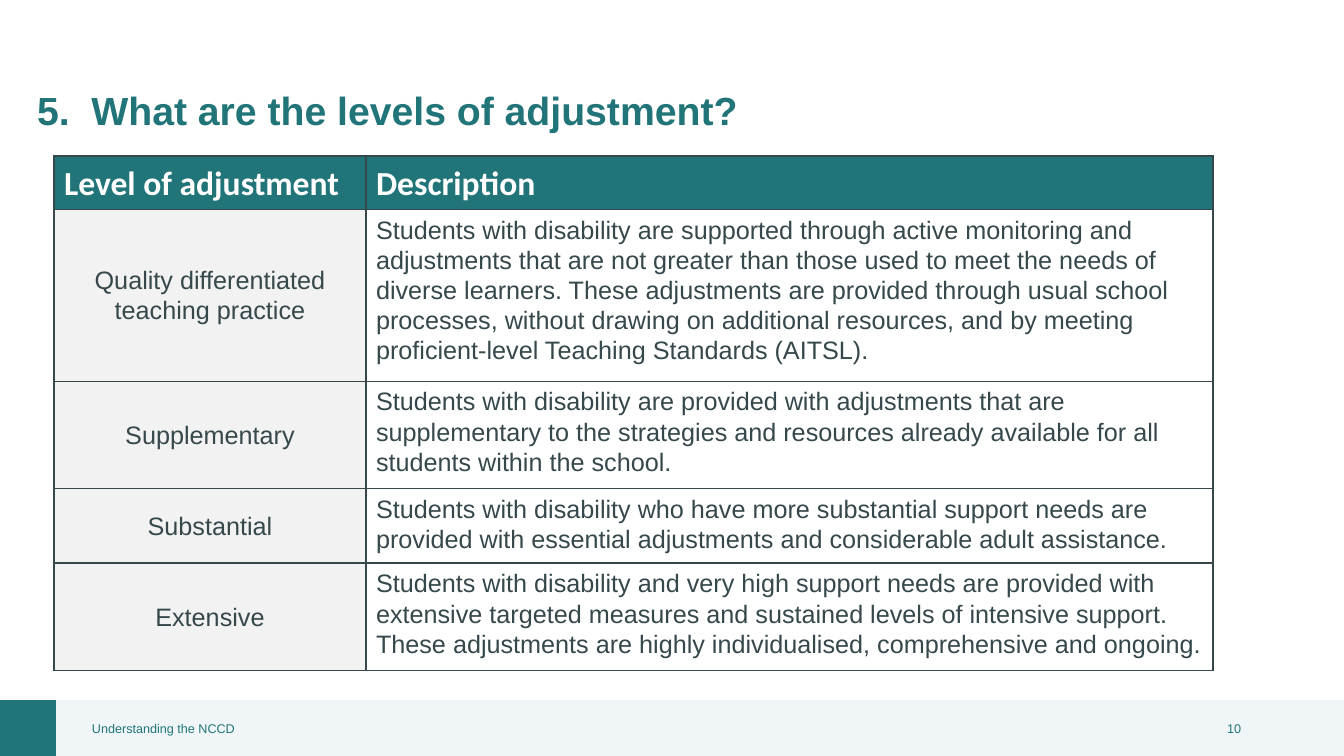
from lxml import etree
from pptx import Presentation
from pptx.dml.color import RGBColor
from pptx.enum.shapes import MSO_SHAPE
from pptx.enum.text import MSO_ANCHOR, MSO_AUTO_SIZE, PP_ALIGN
from pptx.oxml.ns import qn
from pptx.util import Pt

TITLE = "5.  What are the levels of adjustment?"
FOOTER = "Understanding the NCCD"
NUMBER = "10"
ROWS = [
    ("Level of adjustment", "Description"),
    ("Quality differentiated teaching practice",
     "Students with disability are supported through active monitoring and "
     "adjustments that are not greater than those used to meet the needs of "
     "diverse learners. These adjustments are provided through usual school "
     "processes, without drawing on additional resources, and by meeting "
     "proficient-level Teaching Standards (AITSL)."),
    ("Supplementary",
     "Students with disability are provided with adjustments that are "
     "supplementary to the strategies and resources already available for all "
     "students within the school."),
    ("Substantial",
     "Students with disability who have more substantial support needs are "
     "provided with essential adjustments and considerable adult assistance."),
    ("Extensive",
     "Students with disability and very high support needs are provided with "
     "extensive targeted measures and sustained levels of intensive support. "
     "These adjustments are highly individualised, comprehensive and ongoing."),
]
WIDTHS = [312, 847]
HEIGHTS = [53, 161, 100, 70, 100]

TEAL = RGBColor(0x21, 0x74, 0x78)
PALE = RGBColor(0xF0, 0xF6, 0xF7)
GREY = RGBColor(0xF2, 0xF2, 0xF2)
SLATE = RGBColor(0x36, 0x48, 0x4C)
WHITE = RGBColor(0xFF, 0xFF, 0xFF)
RECT = MSO_SHAPE.RECTANGLE
MIDDLE, TOP = MSO_ANCHOR.MIDDLE, MSO_ANCHOR.TOP
LEFT, CENTER, RIGHT = PP_ALIGN.LEFT, PP_ALIGN.CENTER, PP_ALIGN.RIGHT
NONE = MSO_AUTO_SIZE.NONE

WIDE, HIGH = 1344, 756
BAR = 56
BASE = HIGH - BAR


def px(n):
    return round(n * 914400 / 100.8)


def write(frame, text, size, color, font="Arial", bold=False, align=LEFT):
    para = frame.paragraphs[0]
    para.alignment = align
    run = para.add_run()
    run.text = text
    run.font.size = Pt(size)
    run.font.name = font
    run.font.bold = bold
    run.font.color.rgb = color
    return para


def block(slide, left, width, color):
    shape = slide.shapes.add_shape(RECT, px(left), px(BASE), px(width), px(BAR))
    shape.shadow.inherit = False
    shape.fill.solid()
    shape.fill.fore_color.rgb = color
    shape.line.fill.background()


def label(slide, left, width, text, align, inset):
    box = slide.shapes.add_textbox(px(left), px(BASE), px(width), px(BAR))
    frame = box.text_frame
    frame.word_wrap = True
    frame.vertical_anchor = MIDDLE
    frame.margin_left = px(inset)
    write(frame, text, 9, TEAL, align=align)


def border(cell):
    props = cell._tc.get_or_add_tcPr()
    for side in ("lnL", "lnR", "lnT", "lnB"):
        line = etree.SubElement(props, qn("a:" + side), w=str(Pt(1)))
        fill = etree.SubElement(line, qn("a:solidFill"))
        etree.SubElement(fill, qn("a:srgbClr"), val=str(SLATE))


def paint(cell, text, head, first):
    border(cell)
    if head or first:
        cell.fill.solid()
        cell.fill.fore_color.rgb = TEAL if head else GREY
    else:
        cell.fill.background()
    mid = first and not head
    cell.vertical_anchor = MIDDLE if mid else TOP
    if head:
        para = write(cell.text_frame, text, 24, WHITE, "Calibri", True)
    else:
        para = write(cell.text_frame, text, 18, SLATE, align=CENTER if mid else LEFT)
    para.line_spacing = 1.07
    para.space_after = Pt(8)


def main():
    deck = Presentation()
    deck.slide_width, deck.slide_height = px(WIDE), px(HIGH)
    slide = deck.slides.add_slide(deck.slide_layouts[5])

    block(slide, BAR, WIDE - BAR, PALE)
    block(slide, 0, BAR, TEAL)

    title = slide.shapes.title
    title.left, title.top = px(27), px(40)
    title.width, title.height = px(1245), px(146)
    title.text_frame.auto_size = NONE
    title.text_frame.vertical_anchor = MIDDLE
    write(title.text_frame, TITLE, 28, TEAL, bold=True).line_spacing = 0.9

    label(slide, 92, 465, FOOTER, LEFT, 0)
    label(slide, 1151, 100, NUMBER, RIGHT, 10)

    grid = slide.shapes.add_table(
        len(ROWS), len(WIDTHS), px(54), px(156), px(sum(WIDTHS)), px(sum(HEIGHTS))
    ).table
    grid.horz_banding = False
    for col, width in zip(grid.columns, WIDTHS):
        col.width = px(width)
    for r, row in enumerate(ROWS):
        grid.rows[r].height = px(HEIGHTS[r])
        for c, text in enumerate(row):
            paint(grid.cell(r, c), text, r == 0, c == 0)

    deck.save("out.pptx")


if __name__ == "__main__":
    main()
